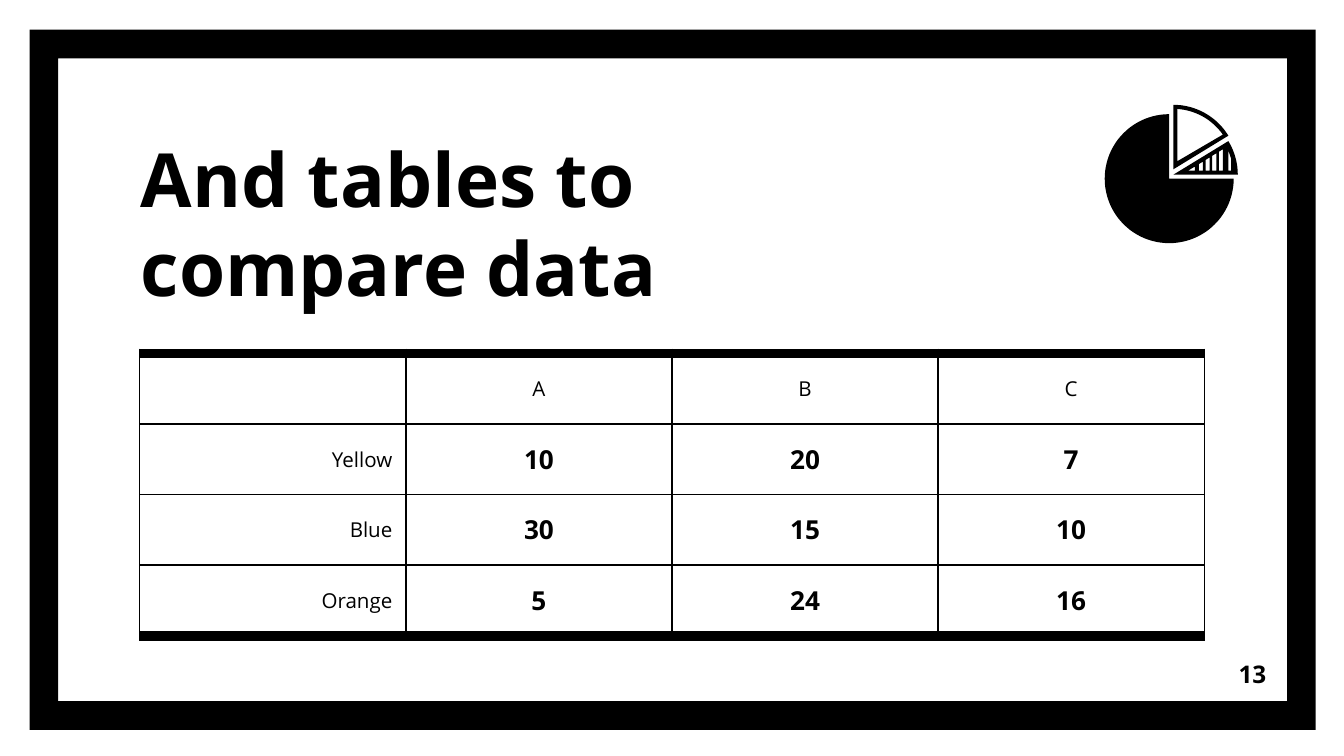
import math
import pptx
import pptx.util
import pptx.oxml
import pptx.dml.color
import pptx.enum.shapes
import pptx.enum.text
from pptx.oxml import ns

Inches, Pt = pptx.util.Inches, pptx.util.Pt
ALIGN = pptx.enum.text.PP_ALIGN
ANCHOR = pptx.enum.text.MSO_ANCHOR

# Content
COLORS = {"ink": "000000", "paper": "FFFFFF"}
FONT = "Open Sans"
TITLE = "And tables to compare data"
PAGE = "13"
ROWS = [
    ["", "A", "B", "C"],
    ["Yellow", "10", "20", "7"],
    ["Blue", "30", "15", "10"],
    ["Orange", "5", "24", "16"],
]
COL, ROW = 1.98, 2.1 / len(ROWS)
THIN, THICK = 0.75, 6


def color(name):
    return pptx.dml.color.RGBColor.from_string(COLORS[name])


def write(frame, text, size=11, bold=False, align=ALIGN.LEFT):
    para = frame.paragraphs[0]
    para.alignment = align
    run = para.add_run()
    run.text = text
    run.font.name = FONT
    run.font.size = Pt(size)
    run.font.bold = bold
    run.font.color.rgb = color("ink")


def add_text(slide, text, box, anchor, **style):
    frame = slide.shapes.add_textbox(*map(Inches, box)).text_frame
    frame.word_wrap = True
    frame.vertical_anchor = anchor
    frame.margin_left = frame.margin_right = Inches(0.1)
    frame.margin_top = frame.margin_bottom = Inches(0.1)
    write(frame, text, **style)


def paint(shape):
    shape.shadow.inherit = False
    shape.fill.solid()
    shape.fill.fore_color.rgb = color("ink")
    shape.line.fill.background()


def border(cell, side, width):
    props = cell._tc.get_or_add_tcPr()
    props.append(pptx.oxml.parse_xml(
        f'<a:{side} {ns.nsdecls("a")} w="{Pt(width)}"><a:solidFill>'
        f'<a:srgbClr val="{COLORS["ink"]}"/></a:solidFill></a:{side}>'))


def arc(x, y, radius, start, end, steps=24):
    """Points on a circle, in degrees counted anticlockwise from the right."""
    turns = [math.radians(start + (end - start) * i / steps)
             for i in range(steps + 1)]
    return [(x + radius * math.cos(t), y - radius * math.sin(t)) for t in turns]


def outline(slide, loops):
    loops = [[(Inches(x), Inches(y)) for x, y in loop] for loop in loops]
    form = slide.shapes.build_freeform(*loops[0][0], scale=1.0)
    for i, loop in enumerate(loops):
        if i:
            form.move_to(*loop[0])
        form.add_line_segments(loop[1:], close=True)
    paint(form.convert_to_shape())


def add_grid(slide):
    wide, high = len(ROWS[0]), len(ROWS)
    table = slide.shapes.add_table(
        high, wide, Inches(1.04), Inches(2.63),
        Inches(COL * wide), Inches(ROW * high)).table
    table.first_row = table.horz_banding = False
    for col in table.columns:
        col.width = Inches(COL)
    for r, row in enumerate(ROWS):
        table.rows[r].height = Inches(ROW)
        for c, text in enumerate(row):
            cell = table.cell(r, c)
            cell.vertical_anchor = ANCHOR.MIDDLE
            cell.margin_left = cell.margin_right = Inches(0.1)
            cell.margin_top = cell.margin_bottom = Inches(0.07)
            border(cell, "lnL", THIN)
            border(cell, "lnR", THIN)
            border(cell, "lnT", THICK if r == 0 else THIN)
            border(cell, "lnB", THICK if r == high - 1 else THIN)
            cell.fill.background()
            if text:
                value = r > 0 and c > 0
                write(cell.text_frame, text, size=14 if value else 11, bold=value,
                      align=ALIGN.CENTER if c else ALIGN.RIGHT)


def add_pie(slide):
    radius, cut = 0.48, 31.4
    # Three solid quarters
    outline(slide, [[(8.7, 1.33)] + arc(8.7, 1.33, radius, 90, 360, 72)])
    # Striped wedge: gaps run from the sloping edge down to the base
    base = 1.27

    def slope(x):
        return 1.24 - 0.62 * (x - 8.89)

    gaps = [[(8.84, base), (8.89, slope(8.89)), (8.89, base)]]
    for i in range(4):
        left = 8.92 + 0.05 * i
        right = left + 0.03
        gaps.append([(left, base), (left, slope(left)),
                     (right, slope(right)), (right, base)])
    gaps.append([(9.14, base), (9.14, 1.12), (9.16, 1.18), (9.16, base)])
    outline(slide, [[(8.73, 1.3)] + arc(8.73, 1.3, radius, cut, 0)] + gaps)
    # Hollow slice
    outline(slide, [[(8.73, 1.26)] + arc(8.73, 1.26, radius, 90, cut),
                    [(8.76, 1.2)] + arc(8.73, 1.26, 0.45, 86, 35)])


def main():
    deck = pptx.Presentation()
    deck.slide_width = Inches(10)
    deck.slide_height = deck.slide_width * 9 // 16
    slide = deck.slides.add_slide(deck.slide_layouts[6])
    slide.background.fill.solid()
    slide.background.fill.fore_color.rgb = color("paper")

    # Frame round the slide
    frame = slide.shapes.add_shape(
        pptx.enum.shapes.MSO_SHAPE.FRAME,
        *map(Inches, (0.22, 0.22, 9.57, 5.21)))
    frame.adjustments[0] = 0.041
    paint(frame)

    # Title, table, icon and page number
    add_text(slide, TITLE, (0.95, 0.93, 5.57, 1.49), ANCHOR.BOTTOM,
             size=40, bold=True)
    add_grid(slide)
    add_pie(slide)
    add_text(slide, PAGE, (8.92, 4.8, 0.6, 0.43), ANCHOR.MIDDLE,
             size=13, bold=True, align=ALIGN.RIGHT)
    deck.save("out.pptx")


if __name__ == "__main__":
    main()
